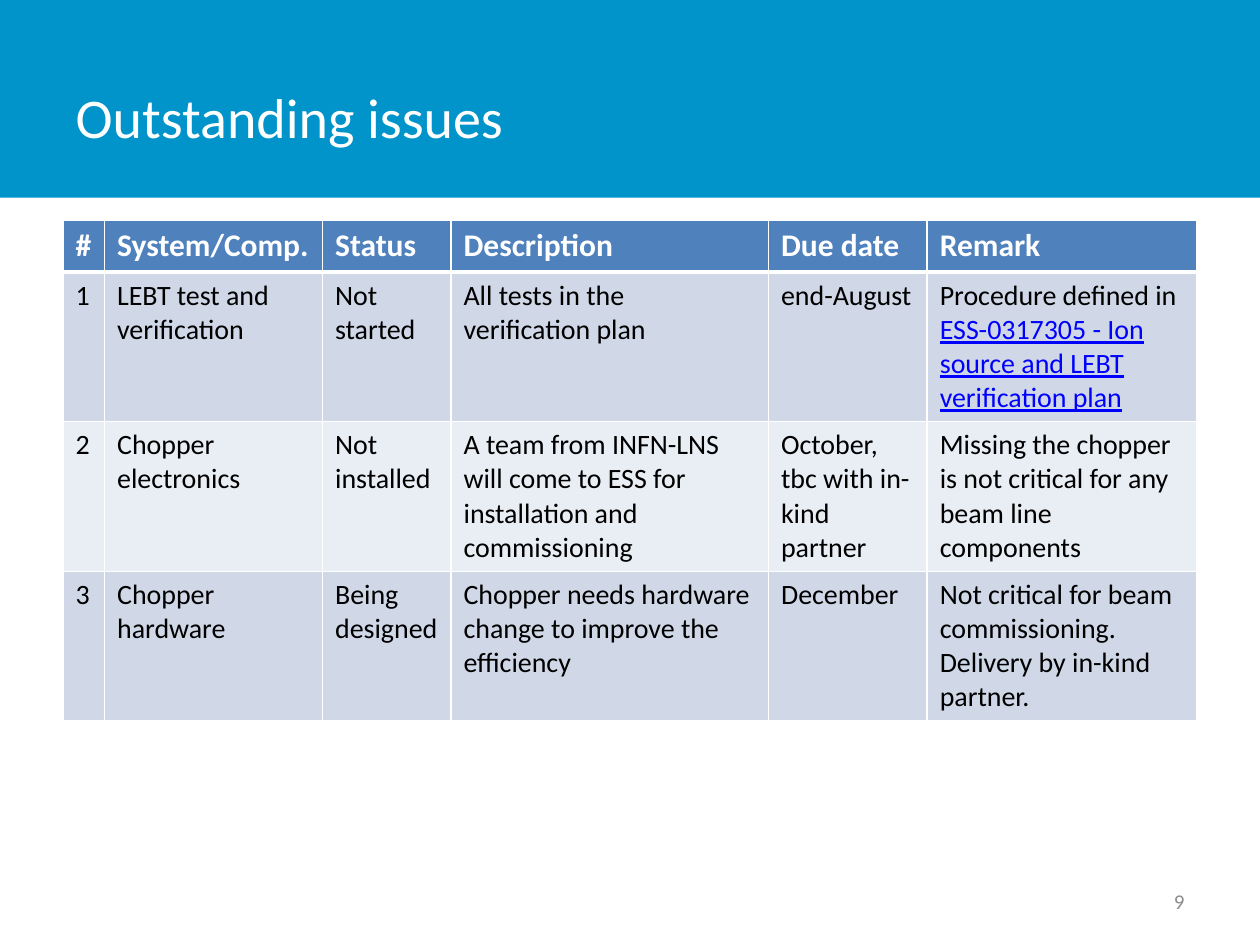
from typing import NamedTuple

from lxml.etree import SubElement
from pptx import Presentation
from pptx.dml.color import RGBColor
from pptx.enum.shapes import MSO_SHAPE
from pptx.enum.text import MSO_ANCHOR, PP_ALIGN
from pptx.oxml.ns import qn
from pptx.util import Inches, Pt

FONT = "Calibri"
COLORS = {
    "band": "0094CA", "head": "4F81BD", "odd": "D0D8E8", "even": "E9EDF4",
    "white": "FFFFFF", "text": "000000", "link": "0000FF", "page": "8C8C8C",
}


class Column(NamedTuple):
    head: str
    width: float


class Issue(NamedTuple):
    system: str
    status: str
    detail: str
    due: str
    remark: str
    link: str = ""


COLUMNS = [
    Column("#", 0.33), Column("System/Comp.", 1.73), Column("Status", 1.02),
    Column("Description", 2.52), Column("Due date", 1.26), Column("Remark", 2.14),
]
ISSUES = [
    Issue("LEBT test and verification", "Not started",
          "All tests in the verification plan", "end-August",
          "Procedure defined in ",
          "ESS-0317305 - Ion source and LEBT verification plan"),
    Issue("Chopper electronics", "Not installed",
          "A team from INFN-LNS will come to ESS for installation and commissioning",
          "October, tbc with in-kind partner",
          "Missing the chopper is not critical for any beam line components"),
    Issue("Chopper hardware", "Being designed",
          "Chopper needs hardware change to improve the efficiency", "December",
          "Not critical for beam commissioning. Delivery by in-kind partner."),
]


def color(name: str) -> RGBColor:
    return RGBColor.from_string(COLORS[name])


def style(run, size: int, name: str, bold: bool = False) -> None:
    run.font.name = FONT
    run.font.size = Pt(size)
    run.font.bold = bold
    run.font.color.rgb = color(name)


def border(cell, side: str, width: float) -> None:
    line = SubElement(cell._tc.get_or_add_tcPr(), qn(f"a:ln{side}"), w=str(Pt(width)))
    fill = SubElement(line, qn("a:solidFill"))
    SubElement(fill, qn("a:srgbClr"), val=COLORS["white"])


def write(cell, text: str, fill: str, size: int, name: str,
          top: int = 1, base: int = 1, bold: bool = False) -> None:
    for side, width in (("L", 1), ("R", 1), ("T", top), ("B", base)):
        border(cell, side, width)
    cell.fill.solid()
    cell.fill.fore_color.rgb = color(fill)
    cell.text_frame.text = text
    style(cell.text_frame.paragraphs[0].runs[0], size, name, bold)


def draw_table(slide) -> None:
    frame = slide.shapes.add_table(len(ISSUES) + 1, len(COLUMNS), Inches(0.5),
                                   Inches(1.75), Inches(9), Inches(3.91))
    table = frame.table
    table.rows[0].height = Inches(0.41)
    for i, col in enumerate(COLUMNS):
        table.columns[i].width = Inches(col.width)
        write(table.cell(0, i), col.head, "head", 18, "white", base=3, bold=True)
    for row, issue in enumerate(ISSUES, 1):
        table.rows[row].height = Inches(1.17)
        fill = "odd" if row % 2 else "even"
        for i, text in enumerate((str(row), *issue[:5])):
            write(table.cell(row, i), text, fill, 16, "text", top=3 if row == 1 else 1)
        if issue.link:
            run = table.cell(row, 5).text_frame.paragraphs[0].add_run()
            run.text = issue.link
            style(run, 16, "link")
            run.font.underline = True


def main() -> None:
    deck = Presentation()
    deck.slide_width, deck.slide_height = Inches(10), Inches(7.5)
    slide = deck.slides.add_slide(deck.slide_layouts[5])

    # Header band, behind the title
    band = slide.shapes.add_shape(MSO_SHAPE.RECTANGLE, 0, 0, Inches(10), Inches(1.57))
    band.shadow.inherit = False
    band.fill.solid()
    band.fill.fore_color.rgb = color("band")
    band.line.fill.background()
    slide.shapes._spTree.insert(2, band._element)

    # Title
    title = slide.shapes.title
    title.left, title.top = Inches(0.5), Inches(0.3)
    title.width, title.height = Inches(7.81), Inches(1.25)
    title.text_frame.text = "Outstanding issues"
    title.text_frame.vertical_anchor = MSO_ANCHOR.MIDDLE
    head = title.text_frame.paragraphs[0]
    head.alignment = PP_ALIGN.LEFT
    style(head.runs[0], 32, "white")

    # Issues
    draw_table(slide)

    # Page number
    page = slide.shapes.add_textbox(Inches(7.17), Inches(6.95), Inches(2.33), Inches(0.4))
    page.text_frame.word_wrap = True
    page.text_frame.vertical_anchor = MSO_ANCHOR.MIDDLE
    page.text_frame.text = "9"
    number = page.text_frame.paragraphs[0]
    number.alignment = PP_ALIGN.RIGHT
    style(number.runs[0], 12, "page")

    deck.save("out.pptx")


if __name__ == "__main__":
    main()
